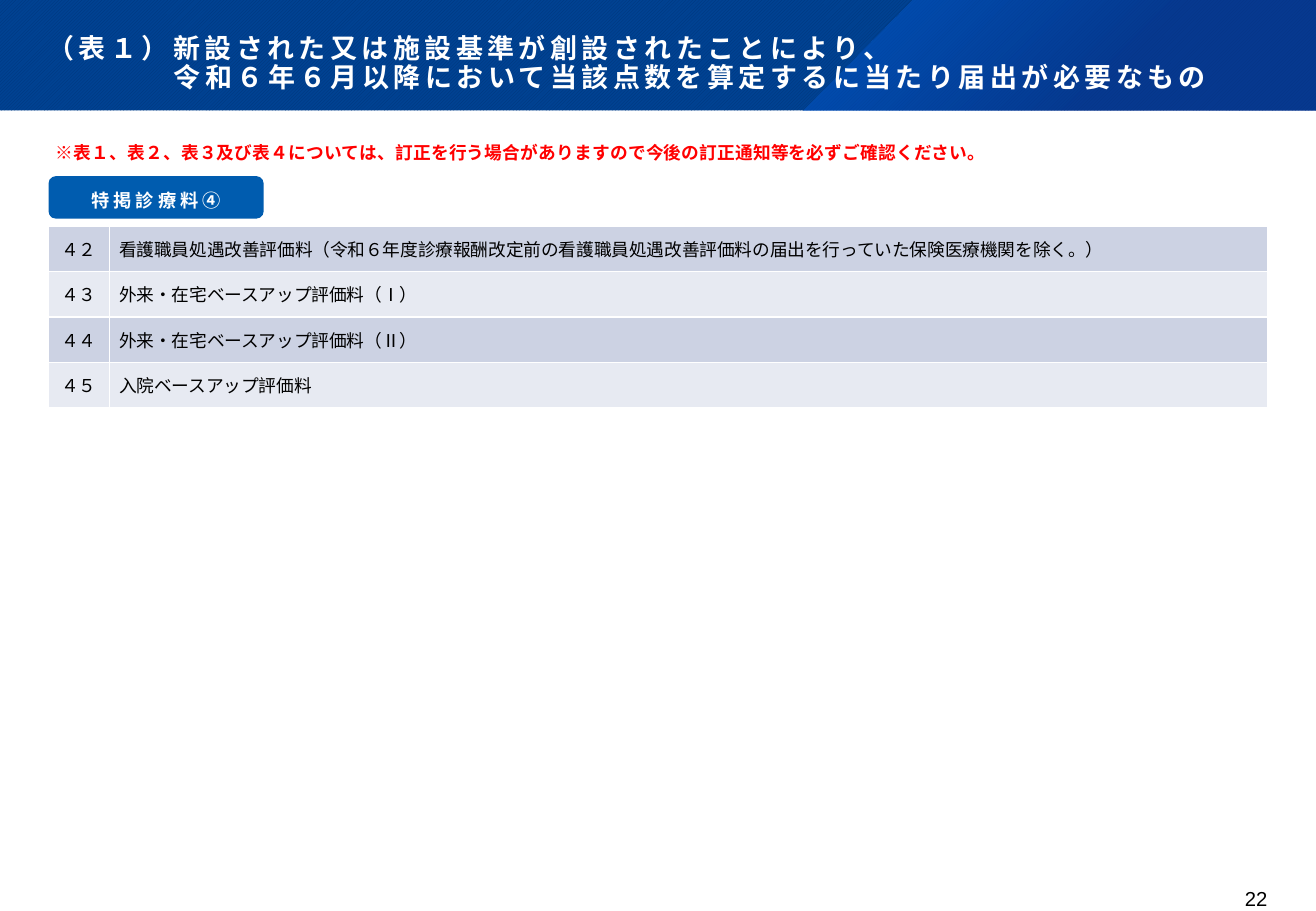
import pptx
import pptx.util
import pptx.dml.color
import pptx.enum.dml
import pptx.enum.shapes
import pptx.enum.text
import pptx.oxml
import pptx.oxml.ns

Inches, Pt = pptx.util.Inches, pptx.util.Pt
Align, Anchor = pptx.enum.text.PP_ALIGN, pptx.enum.text.MSO_ANCHOR
Shape = pptx.enum.shapes.MSO_SHAPE

WIDE, HIGH = 10.83, 7.5
EDGE = 0.4
BODY = WIDE - 2 * EDGE
KARLA, NOTO = "Karla", "Noto Sans CJK JP"
COLORS = {
    "white": "FFFFFF", "black": "000000", "red": "FF0000",
    "hatch": "003579", "navy": "004292", "label": "005CAF",
    "glow": "0064DF", "deep": "0C338E",
    "odd": "CCD2E3", "even": "E7EAF2",
}
ITEMS = [
    ("４２", "看護職員処遇改善評価料（令和６年度診療報酬改定前の看護職員処遇改善評価料の届出を行っていた保険医療機関を除く。）"),
    ("４３", "外来・在宅ベースアップ評価料（Ⅰ）"),
    ("４４", "外来・在宅ベースアップ評価料（Ⅱ）"),
    ("４５", "入院ベースアップ評価料"),
]


def color(name):
    return pptx.dml.color.RGBColor.from_string(COLORS[name])


def inches(box):
    return [Inches(n) for n in box]


def write(frame, text, size, tint, face=NOTO, bold=False, align=Align.LEFT,
          anchor=Anchor.TOP, inset=(0, 0, 0, 0), space=0):
    """Fill a text frame with one paragraph and return it."""
    frame.word_wrap = True
    frame.vertical_anchor = anchor
    (frame.margin_left, frame.margin_top,
     frame.margin_right, frame.margin_bottom) = inches(inset)
    para = frame.paragraphs[0]
    para.text = text
    para.alignment = align
    font = para.font
    font.size, font.name, font.bold = Pt(size), face, bold
    font.color.rgb = color(tint)
    props = para._p.pPr.find(pptx.oxml.ns.qn("a:defRPr"))
    props.append(pptx.oxml.parse_xml(
        f'<a:ea {pptx.oxml.ns.nsdecls("a")} typeface="{NOTO}"/>'))
    if space:
        props.set("spc", str(round(space * 100)))
    return para


def glow(shape):
    """Give a shape a see-through radial gradient."""
    stops = "".join(
        f'<a:gs pos="{at}000"><a:srgbClr val="{COLORS[name]}">'
        f'<a:alpha val="{alpha}000"/></a:srgbClr></a:gs>'
        for at, name, alpha in [(0, "glow", 50), (62, "deep", 55)])
    shape.fill.background()
    props = shape.element.spPr
    old = props.find(pptx.oxml.ns.qn("a:noFill"))
    props.replace(old, pptx.oxml.parse_xml(
        f'<a:gradFill {pptx.oxml.ns.nsdecls("a")}><a:gsLst>{stops}</a:gsLst>'
        '<a:path path="circle"><a:fillToRect r="100000" b="100000"/></a:path>'
        '</a:gradFill>'))


def header(slide, box, text):
    left, top, width, height = box
    # Hatched band
    band = slide.shapes.add_shape(Shape.RECTANGLE, *inches(box))
    band.shadow.inherit = False
    band.fill.patterned()
    band.fill.pattern = pptx.enum.dml.MSO_PATTERN.DARK_UPWARD_DIAGONAL
    band.fill.fore_color.rgb = color("hatch")
    band.fill.back_color.rgb = color("navy")
    band.line.fill.background()
    # Slanted accent on the right
    right, base = left + width, top + height
    start = left + width * 0.61
    pen = slide.shapes.build_freeform(
        Inches(start + height), Inches(top), scale=1.0)
    pen.add_line_segments(
        [inches(spot) for spot in [(right, top), (right, base), (start, base)]])
    accent = pen.convert_to_shape()
    accent.shadow.inherit = False
    accent.line.fill.background()
    glow(accent)
    # Title in front, second line hanging past the table number
    title = slide.shapes.title
    title.left, title.top, title.width, title.height = inches(box)
    slide.shapes.element.append(title.element)
    para = write(title.text_frame, text, 16, "white", KARLA, True,
                 anchor=Anchor.BOTTOM, inset=(0.39, 0.36, 0.36, 0.14), space=2.7)
    title.text_frame.auto_size = pptx.enum.text.MSO_AUTO_SIZE.NONE
    para.line_spacing = 0.9
    para.space_before = Pt(0)
    hang = Inches(1.04)
    para._p.pPr.set("marL", str(hang))
    para._p.pPr.set("indent", str(-hang))


def note(slide, box, text):
    area = slide.shapes.add_textbox(*inches(box))
    para = write(area.text_frame, text, 10.5, "red", bold=True,
                 align=Align.JUSTIFY, inset=(0.06, 0.03, 0.06, 0.03))
    para.space_after = Pt(4)


def label(slide, box, text):
    tab = slide.shapes.add_shape(Shape.ROUNDED_RECTANGLE, *inches(box))
    tab.adjustments[0] = 0.17
    tab.shadow.inherit = False
    tab.fill.solid()
    tab.fill.fore_color.rgb = color("label")
    tab.line.fill.background()
    para = write(tab.text_frame, text, 10.8, "white", bold=True,
                 align=Align.CENTER, anchor=Anchor.MIDDLE,
                 inset=(0.1, 0.05, 0.1, 0.05), space=2.4)
    para.line_spacing = 1.3
    para.space_after = Pt(8)


def listing(slide, box, items):
    table = slide.shapes.add_table(len(items), 2, *inches(box)).table
    table.first_row = False
    first = 0.5
    table.columns[0].width = Inches(first)
    table.columns[1].width = Inches(box[2] - first)
    for r, item in enumerate(items):
        for c, text in enumerate(item):
            cell = table.cell(r, c)
            cell.fill.solid()
            cell.fill.fore_color.rgb = color("even" if r % 2 else "odd")
            write(cell.text_frame, text, 10.5, "black", KARLA,
                  align=Align.LEFT if c else Align.CENTER)
            cell.vertical_anchor = Anchor.MIDDLE
            cell.margin_left = cell.margin_right = Inches(0.08)
            cell.margin_top = cell.margin_bottom = 0


def number(slide, box, text):
    area = slide.shapes.add_textbox(*inches(box))
    write(area.text_frame, text, 12, "black", "Arial", align=Align.RIGHT)


def main():
    deck = pptx.Presentation()
    deck.slide_width, deck.slide_height = Inches(WIDE), Inches(HIGH)
    slide = deck.slides.add_slide(deck.slide_layouts[5])
    header(slide, (0, 0, WIDE, 0.91),
           "（表１）新設された又は施設基準が創設されたことにより、\v"
           "令和６年６月以降において当該点数を算定するに当たり届出が必要なもの")
    number(slide, (WIDE - EDGE - 0.69, 7.3, 0.69, 0.3), "22")
    listing(slide, (EDGE, 1.86, BODY, 1.5), ITEMS)
    label(slide, (EDGE, 1.45, 1.77, 0.35), "特掲診療料④")
    note(slide, (EDGE, 1.14, 7.64, 0.24),
         "※表１、表２、表３及び表４については、訂正を行う場合がありますので今後の訂正通知等を必ずご確認ください。")
    deck.save("out.pptx")


if __name__ == "__main__":
    main()
